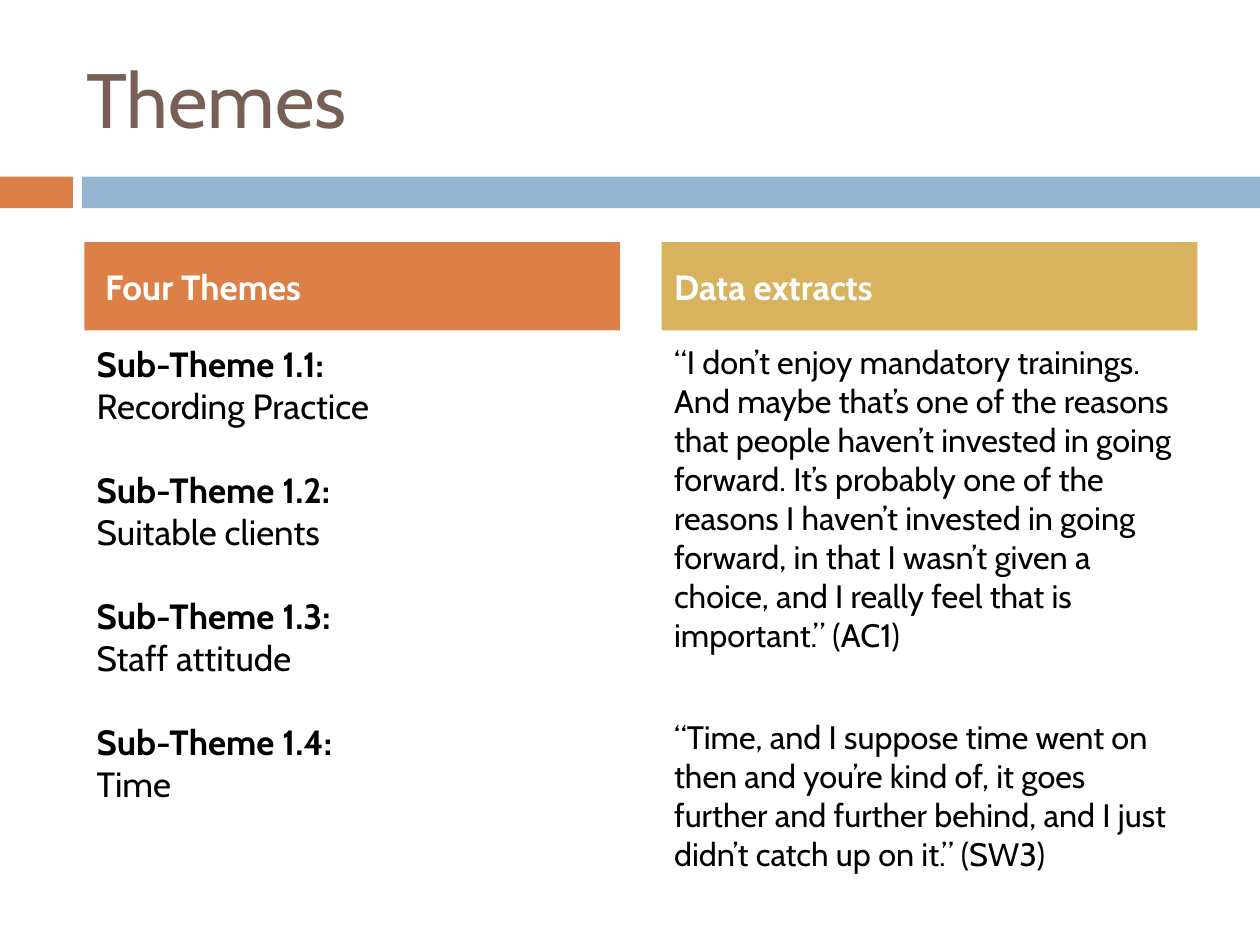
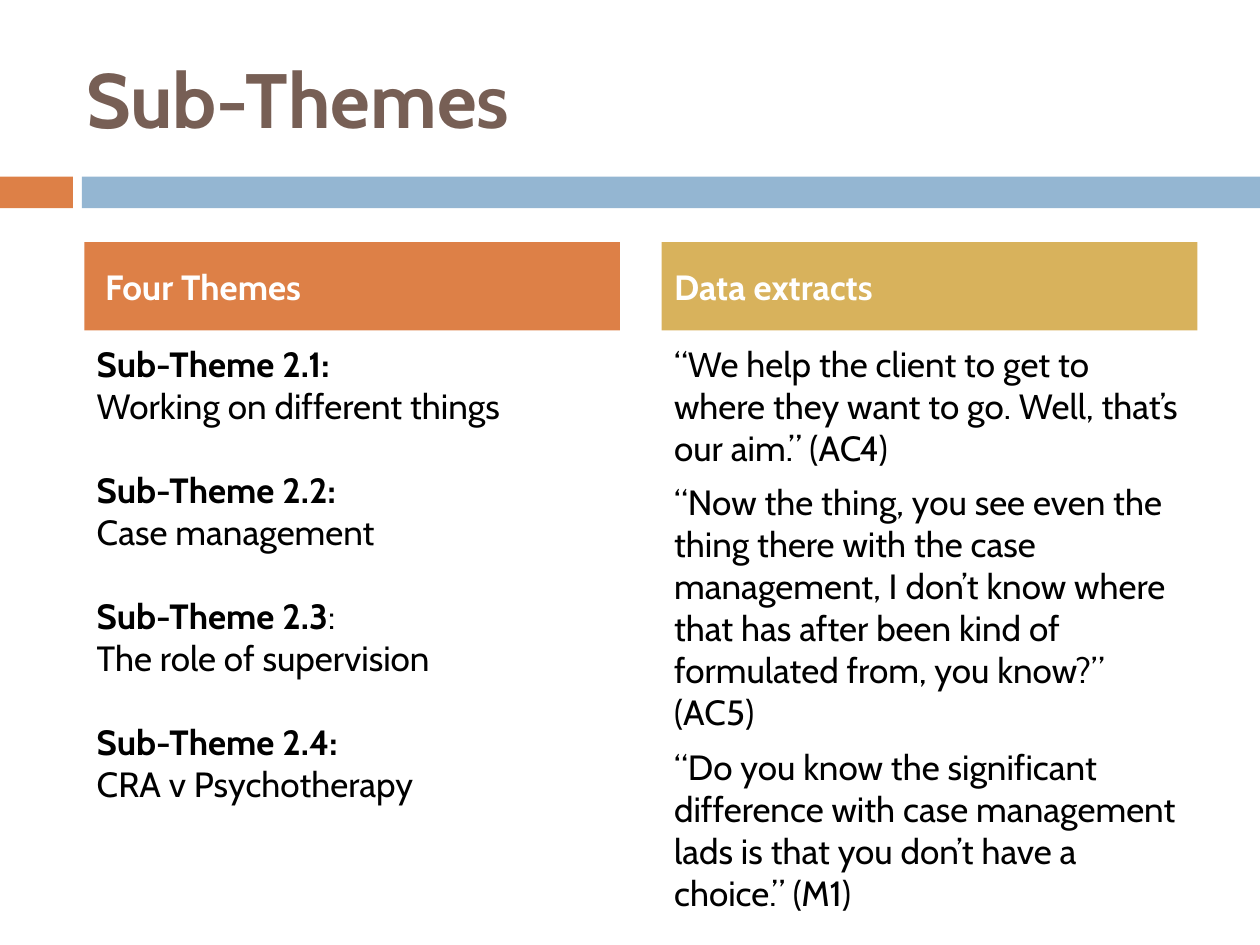
import pptx
import pptx.util
import pptx.dml.color
import pptx.enum.shapes
import pptx.enum.text

Cm = pptx.util.Cm
Pt = pptx.util.Pt
RGBColor = pptx.dml.color.RGBColor
Anchor = pptx.enum.text.MSO_ANCHOR

ORANGE = RGBColor(0xDD, 0x80, 0x47)
BLUE = RGBColor(0x94, 0xB6, 0xD2)
GOLD = RGBColor(0xD8, 0xB2, 0x5C)
BROWN = RGBColor(0x77, 0x5F, 0x55)
BLACK = RGBColor(0, 0, 0)
WHITE = RGBColor(0xFF, 0xFF, 0xFF)

SLIDE_WIDTH, SLIDE_HEIGHT = Cm(25.4), Cm(19.05)
BAND_TOP, BAND_HEIGHT = Cm(3.56), Cm(0.64)
ACCENT_WIDTH, BAND_LEFT = Cm(1.47), Cm(1.65)
THEMES_LEFT, EXTRACTS_LEFT = Cm(1.7), Cm(13.34)
COLUMN_WIDTH = Cm(10.8)
HEADING_TOP, HEADING_HEIGHT = Cm(4.88), Cm(1.78)
BODY_TOP, BODY_HEIGHT = Cm(6.78), Cm(9.96)

TITLE_BOX = {"left": Cm(1.48), "top": Cm(0.76), "width": Cm(22.66), "height": Cm(2.41)}
TITLE_FONT = {"name": "Cabin", "size": Pt(44)}
HEADING_FONT = {"name": "Cabin", "size": Pt(20), "bold": True}
BODY_FONT = {"name": "Cabin", "size": Pt(20), "bold": False}
BODY_FRAME = {"word_wrap": True, "vertical_anchor": Anchor.TOP}
HEADING_FRAME = {"word_wrap": True, "vertical_anchor": Anchor.MIDDLE}
TITLE_FRAME = {**HEADING_FRAME, "auto_size": pptx.enum.text.MSO_AUTO_SIZE.NONE}

SLIDES = [
    {
        "title": "Themes",
        "title_bold": False,
        "themes": [
            ("Sub-Theme 1.1:", "", "Recording Practice"),
            ("Sub-Theme 1.2:", "", "Suitable clients"),
            ("Sub-Theme 1.3:", "", "Staff attitude"),
            ("Sub-Theme 1.4:", "", "Time"),
        ],
        "extracts": [
            "“I don’t enjoy mandatory trainings. And maybe that’s one of the reasons "
            "that people haven’t invested in going forward. It’s probably one of the "
            "reasons I haven’t invested in going forward, in that I wasn’t given a "
            "choice, and I really feel that is important.” (AC1)",
            "“Time, and I suppose time went on then and you’re kind of, it goes further "
            "and further behind, and I just didn’t catch up on it.” (SW3)",
        ],
        "extract_size": Pt(18.5),
        "extract_gap": Pt(36.5),
    },
    {
        "title": "Sub-Themes",
        "title_bold": True,
        "themes": [
            ("Sub-Theme 2.1:", "", "Working on different things"),
            ("Sub-Theme 2.2:", "", "Case management"),
            ("Sub-Theme 2.3", ":", "The role of supervision"),
            ("Sub-Theme 2.4:", "", "CRA v Psychotherapy"),
        ],
        "extracts": [
            "“We help the client to get to where they want to go. Well, that’s our "
            "aim.” (AC4)",
            "“Now the thing, you see even the thing there with the case management, I "
            "don’t know where that has after been kind of formulated from, you know?” "
            "(AC5)",
            "“Do you know the significant difference with case management lads is that "
            "you don’t have a choice.” (M1)",
        ],
        "extract_size": Pt(20),
        "extract_gap": Pt(7),
    },
]


def apply(target, values):
    for attribute, value in values.items():
        setattr(target, attribute, value)


def add_run(paragraph, text, font, color):
    run = paragraph.add_run()
    run.text = text
    apply(run.font, font)
    run.font.color.rgb = color


def add_paragraph(frame, is_first, gap):
    if is_first:
        return frame.paragraphs[0]
    paragraph = frame.add_paragraph()
    paragraph.space_before = gap
    return paragraph


def add_block(slide, left, top, width, height, color):
    block = slide.shapes.add_shape(
        pptx.enum.shapes.MSO_SHAPE.RECTANGLE, left, top, width, height)
    block.shadow.inherit = False
    block.fill.solid()
    block.fill.fore_color.rgb = color
    block.line.fill.background()
    return block


def add_title(slide, text, bold):
    title = slide.shapes.title
    apply(title, TITLE_BOX)
    apply(title.text_frame, TITLE_FRAME)
    paragraph = title.text_frame.paragraphs[0]
    paragraph.alignment = pptx.enum.text.PP_ALIGN.LEFT
    add_run(paragraph, text, {**TITLE_FONT, "bold": bold}, BROWN)


def add_band(slide):
    add_block(slide, 0, BAND_TOP, ACCENT_WIDTH, BAND_HEIGHT, ORANGE)
    add_block(slide, BAND_LEFT, BAND_TOP, SLIDE_WIDTH - BAND_LEFT, BAND_HEIGHT, BLUE)


def add_heading(slide, left, text, color, inset):
    heading = add_block(slide, left, HEADING_TOP, COLUMN_WIDTH, HEADING_HEIGHT, color)
    apply(heading.text_frame, {**HEADING_FRAME, "margin_left": inset})
    paragraph = heading.text_frame.paragraphs[0]
    paragraph.alignment = pptx.enum.text.PP_ALIGN.LEFT
    add_run(paragraph, text, HEADING_FONT, WHITE)


def add_column(slide, left):
    column = slide.shapes.add_textbox(left, BODY_TOP, COLUMN_WIDTH, BODY_HEIGHT)
    apply(column.text_frame, BODY_FRAME)
    return column.text_frame


def add_themes(slide, themes):
    frame = add_column(slide, THEMES_LEFT)
    for index, (label, label_end, description) in enumerate(themes):
        label_line = add_paragraph(frame, index == 0, Pt(24))
        add_run(label_line, label, HEADING_FONT, BLACK)
        if label_end:
            add_run(label_line, label_end, BODY_FONT, BLACK)
        add_run(add_paragraph(frame, False, Pt(0)), description, BODY_FONT, BLACK)


def add_extracts(slide, extracts, size, gap):
    frame = add_column(slide, EXTRACTS_LEFT)
    for index, extract in enumerate(extracts):
        quote = add_paragraph(frame, index == 0, gap)
        add_run(quote, extract, {**BODY_FONT, "size": size}, BLACK)


def main():
    deck = pptx.Presentation()
    apply(deck, {"slide_width": SLIDE_WIDTH, "slide_height": SLIDE_HEIGHT})
    title_only = deck.slide_layouts[5]
    for content in SLIDES:
        slide = deck.slides.add_slide(title_only)
        add_band(slide)
        add_title(slide, content["title"], content["title_bold"])
        add_themes(slide, content["themes"])
        add_extracts(slide, content["extracts"], content["extract_size"],
                     content["extract_gap"])
        add_heading(slide, THEMES_LEFT, "Four Themes", ORANGE, Cm(0.42))
        add_heading(slide, EXTRACTS_LEFT, "Data extracts", GOLD, Cm(0.25))
    deck.save("out.pptx")


if __name__ == "__main__":
    main()
